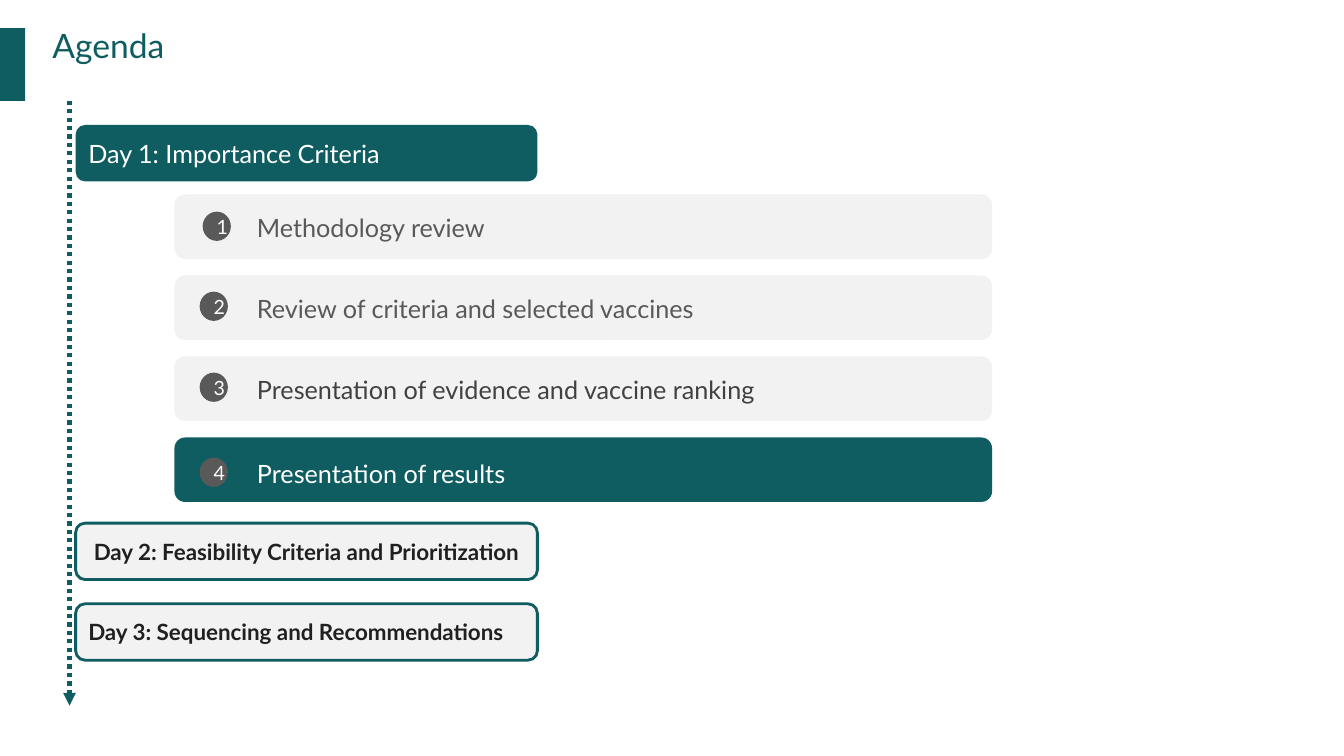
from lxml.etree import SubElement
from pptx import Presentation
from pptx.dml.color import RGBColor
from pptx.enum.dml import MSO_LINE
from pptx.enum.shapes import MSO_CONNECTOR, MSO_SHAPE
from pptx.enum.text import MSO_ANCHOR, MSO_AUTO_SIZE, PP_ALIGN
from pptx.oxml.ns import qn
from pptx.util import Inches, Pt

TEAL = RGBColor(0x0F, 0x5D, 0x61)
PALE_GRAY = RGBColor(0xF2, 0xF2, 0xF2)
GRAY = RGBColor(0x59, 0x59, 0x59)
DARK_GRAY = RGBColor(0x41, 0x41, 0x41)
NEAR_BLACK = RGBColor(0x20, 0x20, 0x20)
WHITE = RGBColor(0xFF, 0xFF, 0xFF)

TOPIC_TOP = 1.93
TOPIC_PITCH = 2.41 / 3
TOPICS = [
    ("Methodology review", PALE_GRAY, GRAY, 2.01, 0.17, 0.13, 7.19),
    ("Review of criteria and selected vaccines", PALE_GRAY, GRAY, 1.98, 0.16, 0.13, 6.93),
    ("Presentation of evidence and vaccine ranking", PALE_GRAY, DARK_GRAY, 1.98, 0.16, 0.13, 6.93),
    ("Presentation of results", TEAL, WHITE, 1.98, 0.2, 0.16, 6.93),
]


class AgendaSlide:
    """Draws the agenda elements on one slide in a shared style."""

    font_name = "Lato"

    def __init__(self, slide):
        self.slide = slide

    def set_text(self, shape, text, size, color, alignment=PP_ALIGN.LEFT, bold=False):
        shape.text_frame.word_wrap = True
        paragraph = shape.text_frame.paragraphs[0]
        paragraph.text = text
        paragraph.alignment = alignment
        paragraph.font.name = self.font_name
        paragraph.font.size = Pt(size)
        paragraph.font.bold = bold
        paragraph.font.color.rgb = color

    def block(self, kind, left, top, width, height, fill, outline=None):
        shape = self.slide.shapes.add_shape(
            kind, Inches(left), Inches(top), Inches(width), Inches(height))
        shape.shadow.inherit = False
        shape.fill.solid()
        shape.fill.fore_color.rgb = fill
        if outline is None:
            shape.line.fill.background()
        else:
            shape.line.color.rgb = outline
            shape.line.width = Pt(2)
        shape.text_frame.vertical_anchor = MSO_ANCHOR.MIDDLE
        return shape

    def label(self, text, left, top, width, height, size, color):
        box = self.slide.shapes.add_textbox(
            Inches(left), Inches(top), Inches(width), Inches(height))
        self.set_text(box, text, size, color)
        return box

    def title(self, text):
        frame = self.label(text, 0.52, 0.25, 12.55, 0.8, 24, TEAL).text_frame
        frame.margin_left = frame.margin_right = Inches(0)
        frame.margin_top = frame.margin_bottom = Inches(0)

    def timeline(self, left, top, bottom):
        connector = self.slide.shapes.add_connector(
            MSO_CONNECTOR.STRAIGHT, Inches(left), Inches(top), Inches(left), Inches(bottom))
        connector.line.color.rgb = TEAL
        connector.line.width = Pt(3)
        connector.line.dash_style = MSO_LINE.ROUND_DOT
        properties = connector.element.spPr
        SubElement(properties.find(qn("a:ln")), qn("a:tailEnd"), type="triangle")
        SubElement(properties, qn("a:effectLst"))

    def day(self, text, top, size, fill, color, outline=None,
            alignment=PP_ALIGN.LEFT, bold=False):
        shape = self.block(MSO_SHAPE.ROUNDED_RECTANGLE, 0.75, top, 4.58, 0.56, fill, outline)
        self.set_text(shape, text, size, color, alignment, bold)

    def topic(self, number, top, text, fill, color, badge_left, badge_drop, text_drop, text_width):
        self.block(MSO_SHAPE.ROUNDED_RECTANGLE, 1.73, top, 8.11, 0.64, fill)
        badge = self.block(MSO_SHAPE.OVAL, badge_left, top + badge_drop, 0.28, 0.29, GRAY)
        self.set_text(badge, str(number), 14, WHITE, PP_ALIGN.CENTER)
        box = self.label(text, 2.45, top + text_drop, text_width, 0.4, 18, color)
        box.text_frame.auto_size = MSO_AUTO_SIZE.SHAPE_TO_FIT_TEXT


def main():
    presentation = Presentation()
    presentation.slide_width = Inches(13.33)
    presentation.slide_height = Inches(7.5)
    agenda = AgendaSlide(presentation.slides.add_slide(presentation.slide_layouts[6]))

    agenda.block(MSO_SHAPE.RECTANGLE, -0.01, 0.28, 0.26, 0.72, TEAL)
    agenda.title("Agenda")
    agenda.timeline(0.69, 1, 7)
    agenda.day("Day 1: Importance Criteria", 1.24, 18, TEAL, WHITE)
    for index, topic in enumerate(TOPICS):
        agenda.topic(index + 1, TOPIC_TOP + index * TOPIC_PITCH, *topic)
    agenda.day("Day 2: Feasibility Criteria and Prioritization", 5.19, 16,
               PALE_GRAY, NEAR_BLACK, TEAL, PP_ALIGN.CENTER, bold=True)
    agenda.day("Day 3: Sequencing and Recommendations", 5.99, 16,
               PALE_GRAY, NEAR_BLACK, TEAL, bold=True)

    presentation.save("out.pptx")


if __name__ == "__main__":
    main()
